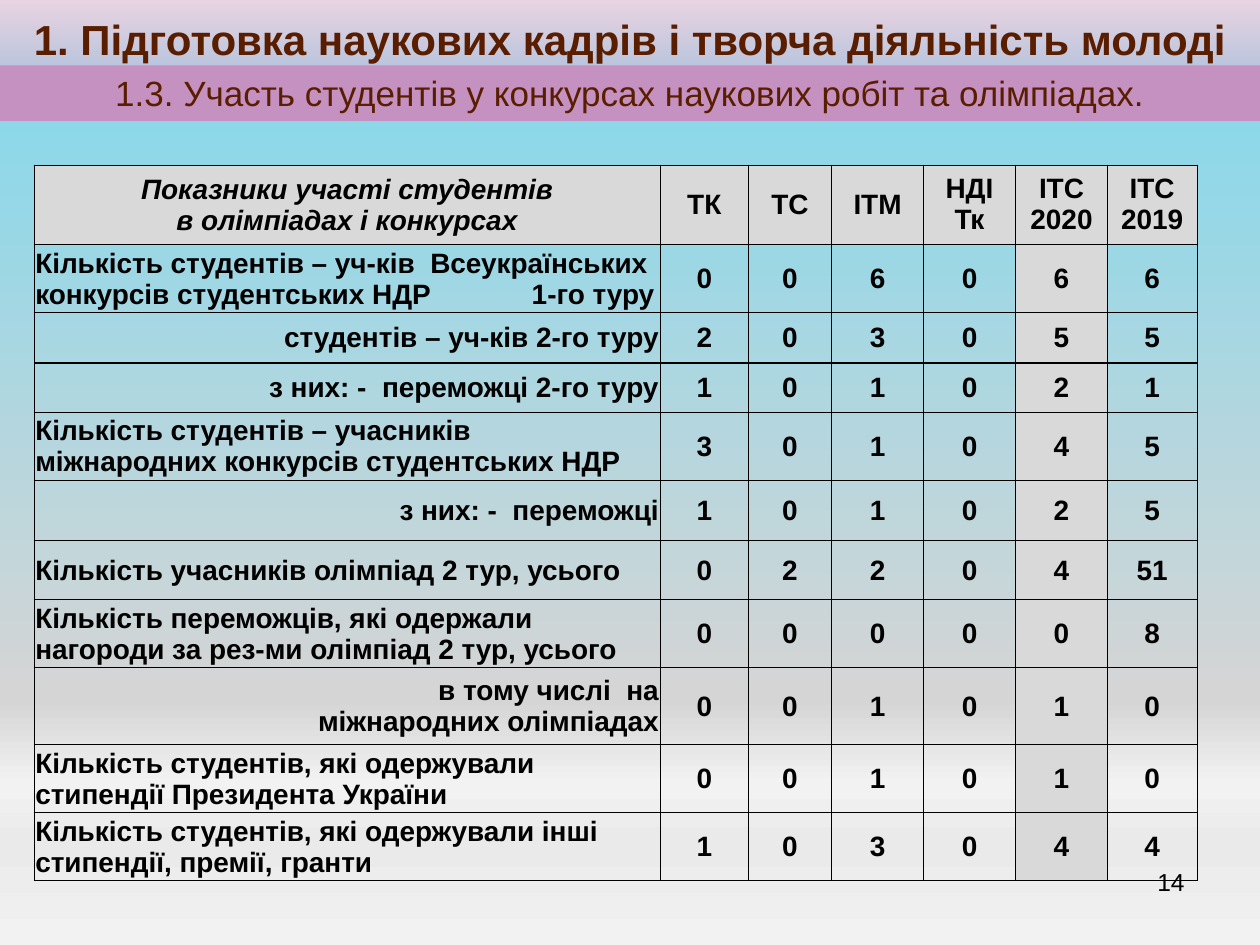
from lxml import etree
from pptx import Presentation
from pptx.dml.color import RGBColor
from pptx.enum.shapes import MSO_SHAPE
from pptx.enum.text import MSO_ANCHOR, PP_ALIGN
from pptx.oxml.ns import qn
from pptx.util import Inches, Pt

RECTANGLE = MSO_SHAPE.RECTANGLE
TOP, MIDDLE = MSO_ANCHOR.TOP, MSO_ANCHOR.MIDDLE
LEFT, CENTER, RIGHT = PP_ALIGN.LEFT, PP_ALIGN.CENTER, PP_ALIGN.RIGHT

SLIDE_WIDTH, SLIDE_HEIGHT = Inches(10), Inches(7.5)
GRID_COLUMNS, GRID_ROWS = 100, 75

COLORS = {
    "band": "C591C1",
    "heading": "591E00",
    "text": "000000",
    "border": "000000",
    "shade": "D9D9D9",
}
BACKGROUND_STOPS = [
    (0, "FFFDF6"), (11, "8AD8EA"), (74, "D5D5D5"),
    (83, "F2F2F2"), (89, "EAEAEA"), (100, "F2F2F2"),
]

TITLE_FONT = {"name": "Arial", "size": Pt(24), "bold": True}
SUBTITLE_FONT = {"name": "Arial", "size": Pt(20), "bold": False}
NUMBER_FONT = {"name": "Arial", "size": Pt(14)}
CELL_FONT = {"name": "Arial", "size": Pt(16), "bold": True, "italic": False}
CORNER_FONT = {**CELL_FONT, "italic": True}

TIGHT_MARGINS = {
    "margin_left": Inches(0.01), "margin_right": Inches(0.01),
    "margin_top": Inches(0.01), "margin_bottom": 0,
}
WIDE_MARGINS = {
    "margin_left": Inches(0.1), "margin_right": Inches(0.1),
    "margin_top": Inches(0.05), "margin_bottom": Inches(0.05),
}

COLUMN_WIDTHS = [49.7, 7, 6.6, 7.3, 7.3, 7.3, 7.1]
ROW_HEIGHTS = [6.3, 5.4, 4, 3.9, 5.4, 4.8, 4.7, 5.4, 6.1, 5.4, 5.4]
CURRENT_YEAR_COLUMN = 5
THICK_COLUMN_EDGES = {5, 6}
THICK_ROW_EDGES = {3}
ROUND_TAB = Inches(3.94)

HEADER = ["Показники участі студентів\vв олімпіадах і конкурсах",
          "ТК", "ТС", "ІТМ", "НДІ Тк", "ІТС 2020", "ІТС 2019"]
INDICATORS = [
    (LEFT, "Кількість студентів – уч-ків  Всеукраїнських конкурсів студентських НДР\t1-го туру",
     [0, 0, 6, 0, 6, 6]),
    (RIGHT, "студентів – уч-ків 2-го туру", [2, 0, 3, 0, 5, 5]),
    (RIGHT, "з них: -  переможці 2-го туру", [1, 0, 1, 0, 2, 1]),
    (LEFT, "Кількість студентів – учасників  міжнародних конкурсів студентських НДР",
     [3, 0, 1, 0, 4, 5]),
    (RIGHT, "з них: -  переможці", [1, 0, 1, 0, 2, 5]),
    (LEFT, "Кількість учасників олімпіад 2 тур, усього", [0, 2, 2, 0, 4, 51]),
    (LEFT, "Кількість переможців, які одержали нагороди за рез-ми олімпіад 2 тур, усього",
     [0, 0, 0, 0, 0, 8]),
    (RIGHT, "в тому числі  на\vміжнародних олімпіадах", [0, 0, 1, 0, 1, 0]),
    (LEFT, "Кількість студентів, які одержували стипендії Президента України",
     [0, 0, 1, 0, 1, 0]),
    (LEFT, "Кількість студентів, які одержували інші стипендії, премії, гранти",
     [1, 0, 3, 0, 4, 4]),
]


def across(columns):
    return round(SLIDE_WIDTH * columns / GRID_COLUMNS)


def down(rows):
    return round(SLIDE_HEIGHT * rows / GRID_ROWS)


def grid_box(left, top, width, height):
    return across(left), down(top), across(width), down(height)


def apply_format(target, values):
    for name, value in values.items():
        setattr(target, name, value)


def add_color(parent, color):
    node = etree.SubElement(parent, qn("a:srgbClr"))
    node.set("val", color)
    return node


def write_text(text_frame, text, alignment, font, color):
    paragraph = text_frame.paragraphs[0]
    paragraph.text = text
    paragraph.alignment = alignment
    for run in paragraph.runs:
        apply_format(run.font, font)
        run.font.color.rgb = RGBColor.from_string(COLORS[color])
    return paragraph


def paint_background(slide):
    slide.background.fill.gradient()
    gradient = next(slide.element.iter(qn("a:gradFill")))
    stops = gradient.find(qn("a:gsLst"))
    for stop in list(stops):
        stops.remove(stop)
    for position, color in BACKGROUND_STOPS:
        stop = etree.SubElement(stops, qn("a:gs"))
        stop.set("pos", str(position * 1000))
        add_color(stop, color)
    gradient.find(qn("a:lin")).set("ang", str(90 * 60000))


def add_band(slide, box, text, font, anchor, opacity=100):
    shape = slide.shapes.add_shape(RECTANGLE, *box)
    shape.shadow.inherit = False
    shape.fill.solid()
    shape.fill.fore_color.rgb = RGBColor.from_string(COLORS["band"])
    shape.line.fill.background()
    if opacity < 100:
        color = next(shape.element.spPr.iter(qn("a:srgbClr")))
        etree.SubElement(color, qn("a:alpha")).set("val", str(opacity * 1000))
    apply_format(shape.text_frame, {"word_wrap": True, "vertical_anchor": anchor})
    write_text(shape.text_frame, text, CENTER, font, "heading")


def add_page_number(slide, box, text):
    text_frame = slide.shapes.add_textbox(*box).text_frame
    text_frame.word_wrap = True
    write_text(text_frame, text, RIGHT, NUMBER_FONT, "text")


def add_tab_stop(paragraph, position):
    properties = paragraph._p.get_or_add_pPr()
    tabs = etree.SubElement(properties, qn("a:tabLst"))
    tab = etree.SubElement(tabs, qn("a:tab"))
    tab.set("pos", str(position))
    tab.set("algn", "l")


def draw_borders(cell, row, column):
    sides = {
        "L": column in THICK_COLUMN_EDGES,
        "R": column + 1 in THICK_COLUMN_EDGES,
        "T": row in THICK_ROW_EDGES,
        "B": row + 1 in THICK_ROW_EDGES,
    }
    properties = cell._tc.get_or_add_tcPr()
    for side, thick in sides.items():
        line = etree.SubElement(properties, qn(f"a:ln{side}"))
        line.set("w", str(Pt(1 if thick else 0.5)))
        add_color(etree.SubElement(line, qn("a:solidFill")), COLORS["border"])


def fill_cell(table, row, column, text, alignment):
    cell = table.cell(row, column)
    is_corner = row == 0 and column == 0
    apply_format(cell, WIDE_MARGINS if row == 0 and column else TIGHT_MARGINS)
    cell.vertical_anchor = MIDDLE
    draw_borders(cell, row, column)
    if row == 0 or column == CURRENT_YEAR_COLUMN:
        cell.fill.solid()
        cell.fill.fore_color.rgb = RGBColor.from_string(COLORS["shade"])
    else:
        cell.fill.background()
    font = CORNER_FONT if is_corner else CELL_FONT
    paragraph = write_text(cell.text_frame, text, alignment, font, "text")
    if "\t" in text:
        add_tab_stop(paragraph, ROUND_TAB)


def add_indicator_table(slide, left, top):
    box = grid_box(left, top, sum(COLUMN_WIDTHS), sum(ROW_HEIGHTS))
    table = slide.shapes.add_table(len(ROW_HEIGHTS), len(COLUMN_WIDTHS), *box).table
    apply_format(table, {"first_row": False, "horz_banding": False})
    for column, width in zip(table.columns, COLUMN_WIDTHS):
        column.width = across(width)
    for row, height in zip(table.rows, ROW_HEIGHTS):
        row.height = down(height)
    for column, text in enumerate(HEADER):
        fill_cell(table, 0, column, text, CENTER)
    for row, (alignment, label, values) in enumerate(INDICATORS, start=1):
        fill_cell(table, row, 0, label, alignment)
        for column, value in enumerate(values, start=1):
            fill_cell(table, row, column, str(value), CENTER)


def main():
    presentation = Presentation()
    apply_format(presentation, {"slide_width": SLIDE_WIDTH, "slide_height": SLIDE_HEIGHT})
    slide = presentation.slides.add_slide(presentation.slide_layouts[6])
    paint_background(slide)
    add_band(slide, grid_box(0, -2.7, 100, 11.5),
             "1. Підготовка наукових кадрів і творча діяльність молоді",
             TITLE_FONT, MIDDLE, opacity=38)
    add_indicator_table(slide, 2.7, 13.1)
    add_band(slide, grid_box(0, 5.2, 100, 4.4),
             "1.3. Участь студентів у конкурсах наукових робіт та олімпіадах.",
             SUBTITLE_FONT, TOP)
    add_page_number(slide, grid_box(71.7, 68.3, 23.3, 5.2), "14")
    presentation.save("out.pptx")


if __name__ == "__main__":
    main()
